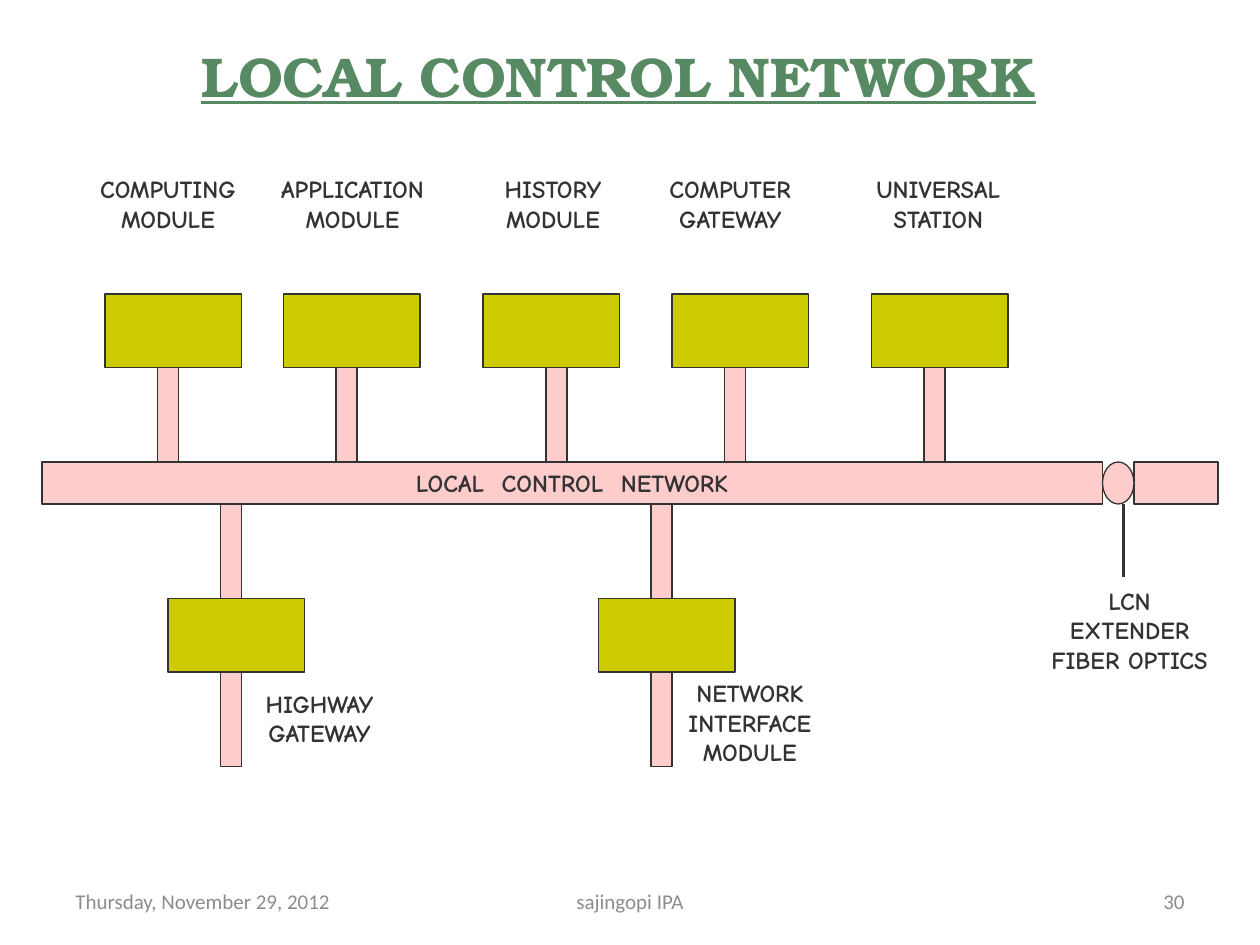
import pptx
import pptx.util
import pptx.dml.color
import pptx.enum.shapes
import pptx.enum.text
import pptx.oxml.ns
from lxml import etree

Pt = pptx.util.Pt
SHAPES = pptx.enum.shapes.MSO_SHAPE
ALIGN = pptx.enum.text.PP_ALIGN
ANCHOR = pptx.enum.text.MSO_ANCHOR

OLIVE, PINK, INK = "CCCC00", "FFCCCC", "333333"
GREEN, GREY = "578963", "8C8C8C"
LABEL_FONT = "Comic Neue"
MODULE_WIDTH, MODULE_HEIGHT = 78, 42
CABLE_WIDTH, CABLE_HEIGHT = 12, 54
BUS_TOP, BUS_HEIGHT = 264, 24
BUS_BOTTOM = BUS_TOP + BUS_HEIGHT


def color(value):
    return pptx.dml.color.RGBColor.from_string(value)


def write(box, lines, size, font, ink, align=ALIGN.CENTER, bold=False,
          underline=False, wrap=True, anchor=ANCHOR.TOP):
    frame = box.text_frame
    frame.word_wrap = wrap
    frame.vertical_anchor = anchor
    for index, line in enumerate(lines):
        para = frame.add_paragraph() if index else frame.paragraphs[0]
        para.alignment = align
        span = para.add_run()
        span.text = line
        span.font.size = Pt(size)
        span.font.name = font
        span.font.bold = bold
        span.font.underline = underline
        span.font.color.rgb = color(ink)


def add_block(page, left, top, width, height, fill, kind=SHAPES.RECTANGLE):
    block = page.shapes.add_shape(kind, Pt(left), Pt(top), Pt(width), Pt(height))
    block.shadow.inherit = False
    block.fill.solid()
    block.fill.fore_color.rgb = color(fill)
    block.line.color.rgb = color(INK)
    block.line.width = Pt(0.75)
    return block


def add_module(page, left, top):
    add_block(page, left, top, MODULE_WIDTH, MODULE_HEIGHT, OLIVE)


def add_cable(page, left, top):
    add_block(page, left, top, CABLE_WIDTH, CABLE_HEIGHT, PINK)


def add_text(page, left, top, width, height, lines, size, font, ink, **style):
    box = page.shapes.add_textbox(Pt(left), Pt(top), Pt(width), Pt(height))
    write(box, lines, size, font, ink, **style)
    return box


def add_label(page, left, top, width, lines, wrap=False):
    height = 41 if len(lines) < 3 else 58.3
    add_text(page, left, top, width, height, lines, 14, LABEL_FONT, INK,
             bold=True, wrap=wrap)


def add_line(page, left, top, bottom):
    line = page.shapes.add_connector(pptx.enum.shapes.MSO_CONNECTOR.STRAIGHT,
                                     Pt(left), Pt(top), Pt(left), Pt(bottom))
    line.line.color.rgb = color(INK)
    line.line.width = Pt(1.5)
    properties = line._element.spPr
    etree.SubElement(properties, pptx.oxml.ns.qn("a:effectLst"))


def main():
    deck = pptx.Presentation()
    deck.slide_width, deck.slide_height = Pt(720), Pt(540)
    page = deck.slides.add_slide(deck.slide_layouts[6])

    # Title, slightly left of the page centre
    title = add_text(page, 24, 20, 672, 53, ["LOCAL CONTROL NETWORK"], 32,
                     "TeX Gyre Bonum", GREEN, bold=True, underline=True)
    title.text_frame.margin_right = Pt(20)

    # Network bus with its extender
    bus = add_block(page, 24, BUS_TOP, 606, BUS_HEIGHT, PINK)
    write(bus, ["LOCAL  CONTROL  NETWORK"], 14, LABEL_FONT, INK, bold=True,
          wrap=False, anchor=ANCHOR.MIDDLE)
    add_block(page, 648, BUS_TOP, 48, BUS_HEIGHT, PINK)
    add_block(page, 630, BUS_TOP, 18, BUS_HEIGHT, PINK, SHAPES.OVAL)
    add_line(page, 642, BUS_BOTTOM, 330)
    add_label(page, 586, 331.2, 119, ["LCN", "EXTENDER", "FIBER OPTICS"])

    # Modules above the bus: module left, cable left, label left and width
    upper = [
        (60, 90, 42, 108, ["COMPUTING MODULE"]),
        (162, 192, 144, 115, ["APPLICATION", "MODULE"]),
        (276, 312, 275, 82, ["HISTORY", "MODULE"]),
        (384, 414, 370, 94.5, ["COMPUTER", "GATEWAY"]),
        (498, 528, 486.5, 99.5, ["UNIVERSAL", "STATION"]),
    ]
    cable_top = BUS_TOP - CABLE_HEIGHT
    for module_left, cable_left, label_left, label_width, lines in upper:
        add_module(page, module_left, cable_top - MODULE_HEIGHT)
        add_cable(page, cable_left, cable_top)
        add_label(page, label_left, 96, label_width, lines,
                  wrap=len(lines) == 1)

    # Modules below the bus, with a cable on either side
    lower = [
        (96, 139, 390, 87, ["HIGHWAY", "GATEWAY"]),
        (342, 379.5, 384, 98, ["NETWORK", "INTERFACE", "MODULE"]),
    ]
    module_top = BUS_BOTTOM + CABLE_HEIGHT
    for module_left, label_left, label_top, label_width, lines in lower:
        add_module(page, module_left, module_top)
        for top in (BUS_BOTTOM, module_top + MODULE_HEIGHT):
            add_cable(page, module_left + 30, top)
        add_label(page, label_left, label_top, label_width, lines)

    # Footer
    for left, width, line, align in (
            (36, 168, "Thursday, November 29, 2012", ALIGN.LEFT),
            (246, 228, "sajingopi IPA", ALIGN.CENTER),
            (516, 168, "30", ALIGN.RIGHT)):
        add_text(page, left, 500.5, width, 28.75, [line], 12, "Calibri", GREY,
                 align=align, anchor=ANCHOR.MIDDLE)

    deck.save("out.pptx")


if __name__ == "__main__":
    main()
